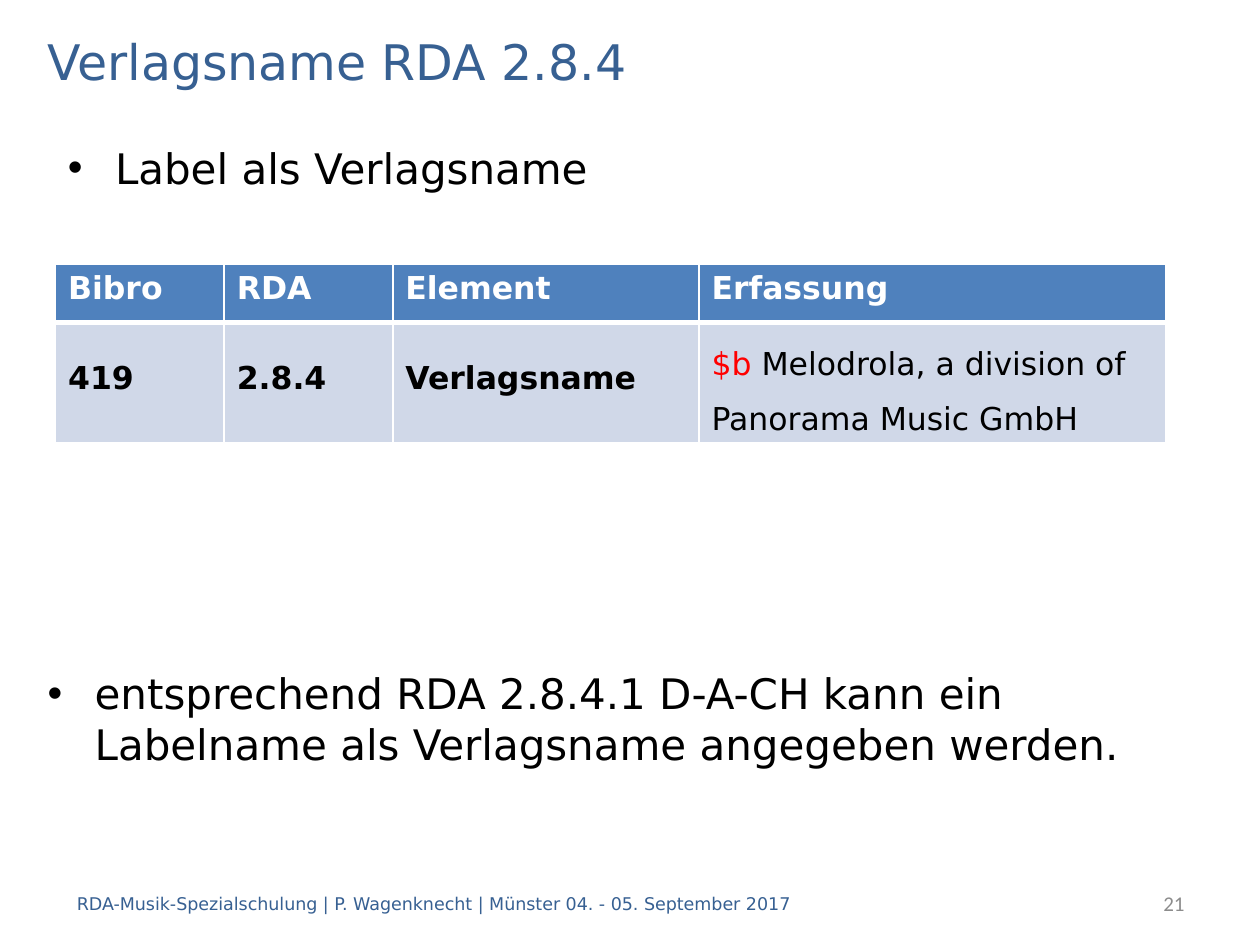
import pptx
import pptx.dml.color
import pptx.enum.text
import pptx.util
from dataclasses import dataclass
from lxml import etree
from pptx.oxml.ns import qn
from pptx.util import Cm

ANCHOR = pptx.enum.text.MSO_ANCHOR
ALIGN = pptx.enum.text.PP_ALIGN


@dataclass(frozen=True)
class Theme:
    font: str = "DejaVu Sans"
    number_font: str = "Calibri"
    accent: str = "376092"
    text: str = "000000"
    muted: str = "8C8C8C"
    subfield: str = "FF0000"
    light: str = "FFFFFF"
    header_fill: str = "4F81BD"
    row_fill: str = "D0D8E8"
    title_size: int = 28
    bullet_size: int = 24
    table_size: int = 18
    number_size: int = 12
    footer_size: int = 10


class SlideBuilder:
    def __init__(self, slide, theme):
        self.slide = slide
        self.theme = theme

    def style(self, font, size, color, bold=False, name=None):
        font.name = name or self.theme.font
        font.size = pptx.util.Pt(size)
        font.bold = bold
        font.color.rgb = pptx.dml.color.RGBColor.from_string(color)

    def text(self, box, words, size, color, anchor=ANCHOR.MIDDLE, align=ALIGN.LEFT, name=None):
        frame = self.slide.shapes.add_textbox(*map(Cm, box)).text_frame
        frame.word_wrap = True
        frame.vertical_anchor = anchor
        paragraph = frame.paragraphs[0]
        paragraph.text = words
        paragraph.alignment = align
        self.style(paragraph.font, size, color, name=name)
        return paragraph

    def bullet(self, box, words):
        size = self.theme.bullet_size
        paragraph = self.text(box, words, size, self.theme.text, ANCHOR.TOP)
        paragraph.space_before = pptx.util.Pt(0.2 * size)
        properties = paragraph._p.get_or_add_pPr()
        properties.set("marL", str(Cm(0.95)))
        properties.set("indent", str(-Cm(0.95)))
        font = etree.SubElement(properties, qn("a:buFont"), typeface="Arial")
        font.addnext(etree.Element(qn("a:buChar"), char="•"))
        # Run defaults belong after the bullet
        properties.append(properties.find(qn("a:defRPr")))

    def borders(self, cell, bottom):
        properties = cell._tc.get_or_add_tcPr()
        widths = {"lnL": 1, "lnR": 1, "lnT": 1, "lnB": bottom}
        for position, (side, width) in enumerate(widths.items()):
            line = etree.Element(qn(f"a:{side}"), w=str(pptx.util.Pt(width)))
            fill = etree.SubElement(line, qn("a:solidFill"))
            etree.SubElement(fill, qn("a:srgbClr"), val=self.theme.light)
            properties.insert(position, line)

    def cell(self, cell, fill, runs, bold=True, bottom=1):
        cell.fill.solid()
        cell.fill.fore_color.rgb = pptx.dml.color.RGBColor.from_string(fill)
        self.borders(cell, bottom)
        paragraph = cell.text_frame.paragraphs[0]
        for words, color in runs:
            run = paragraph.add_run()
            run.text = words
            self.style(run.font, self.theme.table_size, color, bold)
        return paragraph

    def table(self, box, widths, heights, header, record):
        theme = self.theme
        table = self.slide.shapes.add_table(2, len(widths), *map(Cm, box)).table
        for column, width in zip(table.columns, widths):
            column.width = Cm(width)
        for row, height in zip(table.rows, heights):
            row.height = Cm(height)
        for column, (heading, runs) in enumerate(zip(header, record)):
            self.cell(table.cell(0, column), theme.header_fill, [(heading, theme.light)], bottom=3)
            value = table.cell(1, column)
            last = column == len(widths) - 1
            value.vertical_anchor = ANCHOR.MIDDLE
            value.margin_top = value.margin_bottom = 0
            paragraph = self.cell(value, theme.row_fill, runs, bold=not last)
            paragraph.line_spacing = 1.5 if last else pptx.util.Pt(16)
            paragraph.space_before = paragraph.space_after = pptx.util.Pt(6)


def main():
    theme = Theme()
    presentation = pptx.Presentation()
    presentation.slide_width, presentation.slide_height = Cm(25.4), Cm(19.05)
    slide = presentation.slides.add_slide(presentation.slide_layouts[6])
    builder = SlideBuilder(slide, theme)

    # Title
    builder.text((0.71, 0.51, 24, 1.42), "Verlagsname RDA 2.8.4", theme.title_size, theme.accent)

    # Statements above and below the table
    builder.bullet((1.12, 2.74, 24, 1.8), "Label als Verlagsname")
    builder.bullet(
        (0.71, 13.34, 24, 3.4),
        "entsprechend RDA 2.8.4.1 D-A-CH kann ein Labelname als Verlagsname angegeben werden.",
    )

    # Cataloguing example
    publisher = [
        ("$b", theme.subfield),
        (" Melodrola, a division of Panorama Music GmbH", theme.text),
    ]
    record = [[(words, theme.text)] for words in ("419", "2.8.4", "Verlagsname")]
    builder.table(
        (1.12, 5.33, 22.38, 3.6),
        widths=(3.4, 3.4, 6.17, 9.4),
        heights=(1.17, 2.43),
        header=("Bibro", "RDA", "Element", "Erfassung"),
        record=record + [publisher],
    )

    # Footer and slide number
    builder.text(
        (1.3, 17.7, 21.2, 1.02),
        "RDA-Musik-Spezialschulung | P. Wagenknecht | Münster 04. - 05. September 2017",
        theme.footer_size, theme.accent,
    )
    builder.text(
        (20.1, 17.7, 4.03, 1.02), "21", theme.number_size, theme.muted,
        align=ALIGN.RIGHT, name=theme.number_font,
    )

    presentation.save("out.pptx")


if __name__ == "__main__":
    main()
